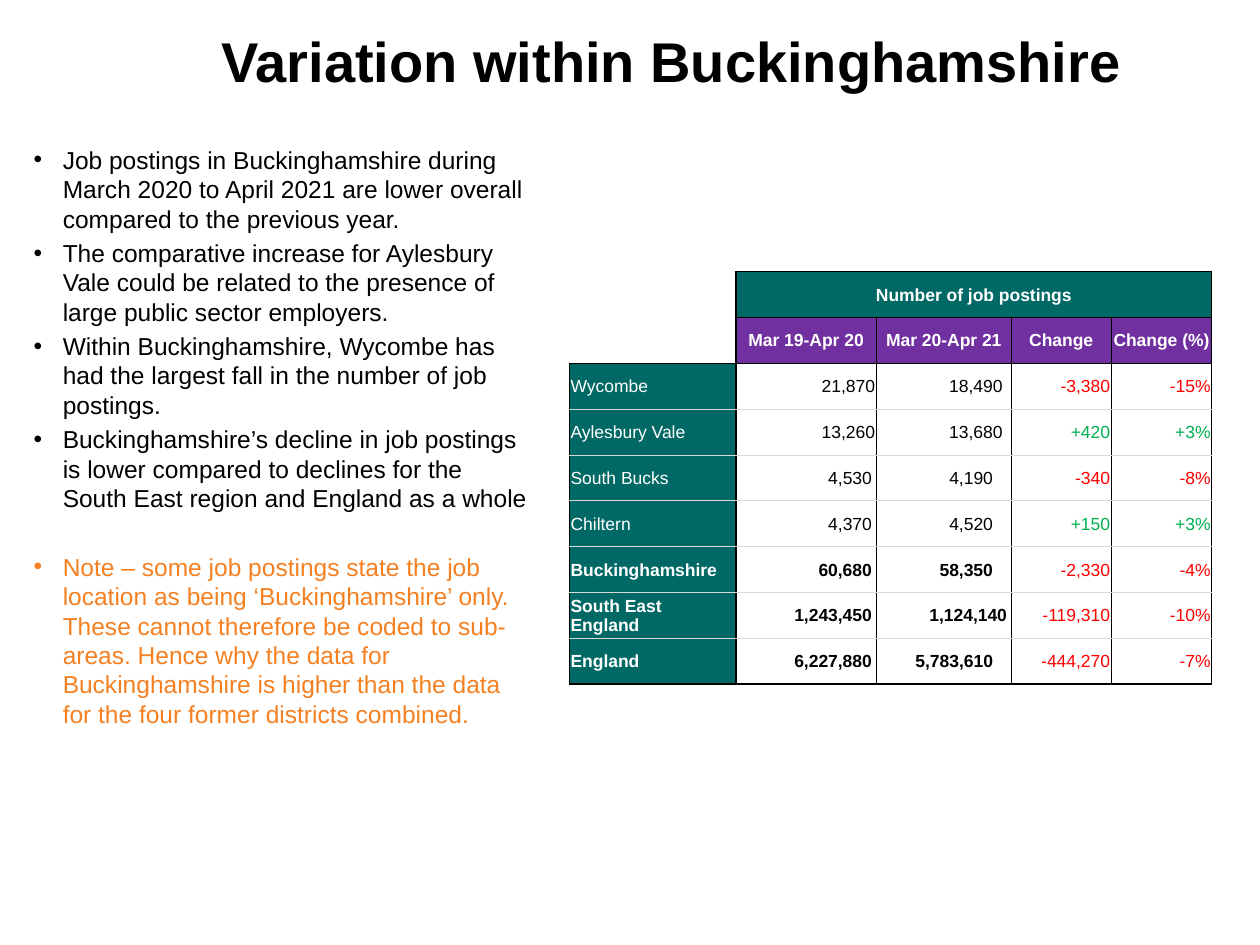
from pptx import Presentation
from pptx.dml.color import RGBColor
from pptx.enum.text import MSO_ANCHOR, PP_ALIGN
from pptx.oxml.ns import qn
from pptx.util import Pt
from lxml import etree

LEFT, CENTER, RIGHT = PP_ALIGN.LEFT, PP_ALIGN.CENTER, PP_ALIGN.RIGHT
TOP, MIDDLE = MSO_ANCHOR.TOP, MSO_ANCHOR.MIDDLE

FONT = "Arial"
BLACK, WHITE, GREY = "000000", "FFFFFF", "D9D9D9"
TEAL, PURPLE, ORANGE = "006965", "7030A0", "F58021"
RED, GREEN = "FF0000", "00B050"

POINTS = [
    "Job postings in Buckinghamshire during March 2020 to April 2021 are lower overall "
    "compared to the previous year.",
    "The comparative increase for Aylesbury Vale could be related to the presence of "
    "large public sector employers.",
    "Within Buckinghamshire, Wycombe has had the largest fall in the number of job postings.",
    "Buckinghamshire’s decline in job postings is lower compared to declines for the "
    "South East region and England as a whole",
]
NOTE = ("Note – some job postings state the job location as being ‘Buckinghamshire’ only. "
        "These cannot therefore be coded to sub-areas. Hence why the data for "
        "Buckinghamshire is higher than the data for the four former districts combined.")

HEADINGS = ["Mar 19-Apr 20", "Mar 20-Apr 21", "Change", "Change (%)"]
# Area, two periods, change, change in percent, right insets of the two periods
AREAS = [
    ("Wycombe", "21,870", "18,490", "-3,380", "-15%", 0.7, 5),
    ("Aylesbury Vale", "13,260", "13,680", "+420", "+3%", 0.7, 5),
    ("South Bucks", "4,530", "4,190", "-340", "-8%", 2.5, 10.5),
    ("Chiltern", "4,370", "4,520", "+150", "+3%", 2.5, 10.5),
    ("Buckinghamshire", "60,680", "58,350", "-2,330", "-4%", 2.5, 10.5),
    ("South East England", "1,243,450", "1,124,140", "-119,310", "-10%", 2.5, 2.5),
    ("England", "6,227,880", "5,783,610", "-444,270", "-7%", 2.5, 10.5),
]
TOTALS_FROM = 4
COL_WIDTHS = [95.1, 80.2, 77.2, 57.1, 57.5]
ROW_HEIGHT = 26.2


def rgb(value):
    return RGBColor.from_string(value)


def apply(obj, values):
    for name, value in values.items():
        setattr(obj, name, value)


class SlideWriter:
    def __init__(self, prs, font):
        self.font = font
        self.s = prs.slides.add_slide(prs.slide_layouts[6])

    def run(self, p, text, size, color, bold=False):
        r = p.add_run()
        r.text = text
        apply(r.font, {"name": self.font, "size": Pt(size), "bold": bold})
        r.font.color.rgb = rgb(color)

    def box(self, x, y, w, h, anchor):
        tf = self.s.shapes.add_textbox(Pt(x), Pt(y), Pt(w), Pt(h)).text_frame
        apply(tf, {"word_wrap": True, "vertical_anchor": anchor})
        return tf

    def title(self, text, x, y, w, h):
        p = self.box(x, y, w, h, MIDDLE).paragraphs[0]
        p.alignment = CENTER
        self.run(p, text, 32, BLACK, True)

    def bullets(self, items, x, y, w, h, indent):
        tf = self.box(x, y, w, h, TOP)
        for i, (text, color, before) in enumerate(items):
            p = tf.add_paragraph() if i else tf.paragraphs[0]
            pPr = p._p.get_or_add_pPr()
            pPr.set("marL", str(Pt(indent)))
            pPr.set("indent", str(-Pt(indent)))
            etree.SubElement(pPr, qn("a:buFont")).set("typeface", self.font)
            etree.SubElement(pPr, qn("a:buChar")).set("char", "•")
            p.space_before = Pt(before)
            self.run(p, text, 14, color)

    def table(self, x, y, widths, rows, height):
        frame = self.s.shapes.add_table(rows, len(widths), Pt(x), Pt(y),
                                        Pt(sum(widths)), Pt(height * rows))
        table = frame.table
        apply(table, {"first_row": False, "horz_banding": False})
        for col, width in zip(table.columns, widths):
            col.width = Pt(width)
        for row in table.rows:
            row.height = Pt(height)
        return table

    def borders(self, cell, lines):
        tcPr = cell._tc.get_or_add_tcPr()
        for side in "LRTB":
            if side in lines:
                color, width = lines[side]
                ln = etree.SubElement(tcPr, qn("a:ln" + side), w=str(Pt(width)))
                fill = etree.SubElement(ln, qn("a:solidFill"))
                etree.SubElement(fill, qn("a:srgbClr"), val=color)

    def cell(self, cell, text="", color=BLACK, align=RIGHT, bold=False, fill=None, inset=0.7):
        apply(cell, {"margin_left": Pt(0.7), "margin_top": Pt(0.7), "margin_right": Pt(inset),
                     "margin_bottom": 0, "vertical_anchor": MIDDLE})
        if fill:
            cell.fill.solid()
            cell.fill.fore_color.rgb = rgb(fill)
        else:
            cell.fill.background()
        if text:
            p = cell.text_frame.paragraphs[0]
            p.alignment = align
            self.run(p, text, 10, color, bold)


def cell_lines(row, col, last_row, last_col):
    thick, thin, pale = (BLACK, 1), (BLACK, 0.5), (GREY, 0.5)

    def vertical(edge):
        return thick if row == 0 or edge in (0, 1, last_col + 1) else thin

    def horizontal(edge):
        if edge in (0, 1, last_row + 1) or (edge == 2 and col == 0):
            return thick
        return thin if edge == 2 else pale

    lines = {"L": vertical(col), "R": vertical(col + 1),
             "T": horizontal(row), "B": horizontal(row + 1)}
    if col == 0 and row < 2:  # open corner
        lines = {"R": thick, "B": thick} if row else {"R": thick}
    return lines


def main():
    prs = Presentation()
    apply(prs, {"slide_width": Pt(720), "slide_height": Pt(540)})
    w = SlideWriter(prs, FONT)

    # Title and findings
    w.title("Variation within Buckinghamshire", 59.8, -10.8, 648, 90)
    items = [(text, BLACK, 2.8 if i else 0) for i, text in enumerate(POINTS)]
    w.bullets(items + [(NOTE, ORANGE, 22.4)], 12.2, 79.2, 297, 371, 16.6)

    # Table grid
    rows, cols = len(AREAS) + 2, len(COL_WIDTHS)
    table = w.table(325.4, 155.2, COL_WIDTHS, rows, ROW_HEIGHT)
    for row in range(rows):
        for col in range(cols):
            w.borders(table.cell(row, col), cell_lines(row, col, rows - 1, cols - 1))

    # Table headings
    for row in range(2):
        w.cell(table.cell(row, 0))
    table.cell(0, 1).merge(table.cell(0, cols - 1))
    w.cell(table.cell(0, 1), "Number of job postings", WHITE, CENTER, True, TEAL)
    for col, text in enumerate(HEADINGS, 1):
        w.cell(table.cell(1, col), text, WHITE, CENTER, True, PURPLE)

    # Table body
    for i, (area, before, after, change, percent, *insets) in enumerate(AREAS):
        row, bold = i + 2, i >= TOTALS_FROM
        w.cell(table.cell(row, 0), area, WHITE, LEFT, bold, TEAL)
        for col, (text, inset) in enumerate(zip((before, after), insets), 1):
            w.cell(table.cell(row, col), text, bold=bold, inset=inset)
        for col, text in enumerate((change, percent), 3):
            w.cell(table.cell(row, col), text, GREEN if text.startswith("+") else RED)

    prs.save("out.pptx")


if __name__ == "__main__":
    main()
